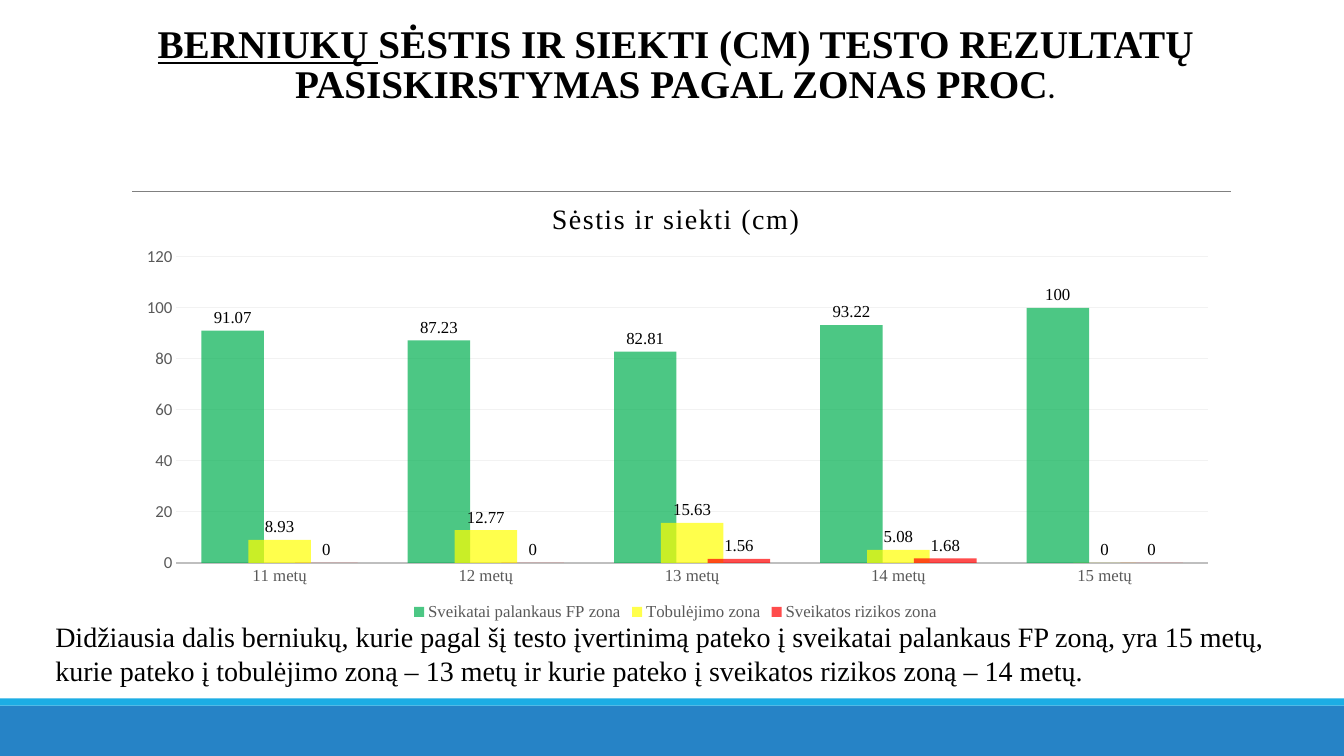
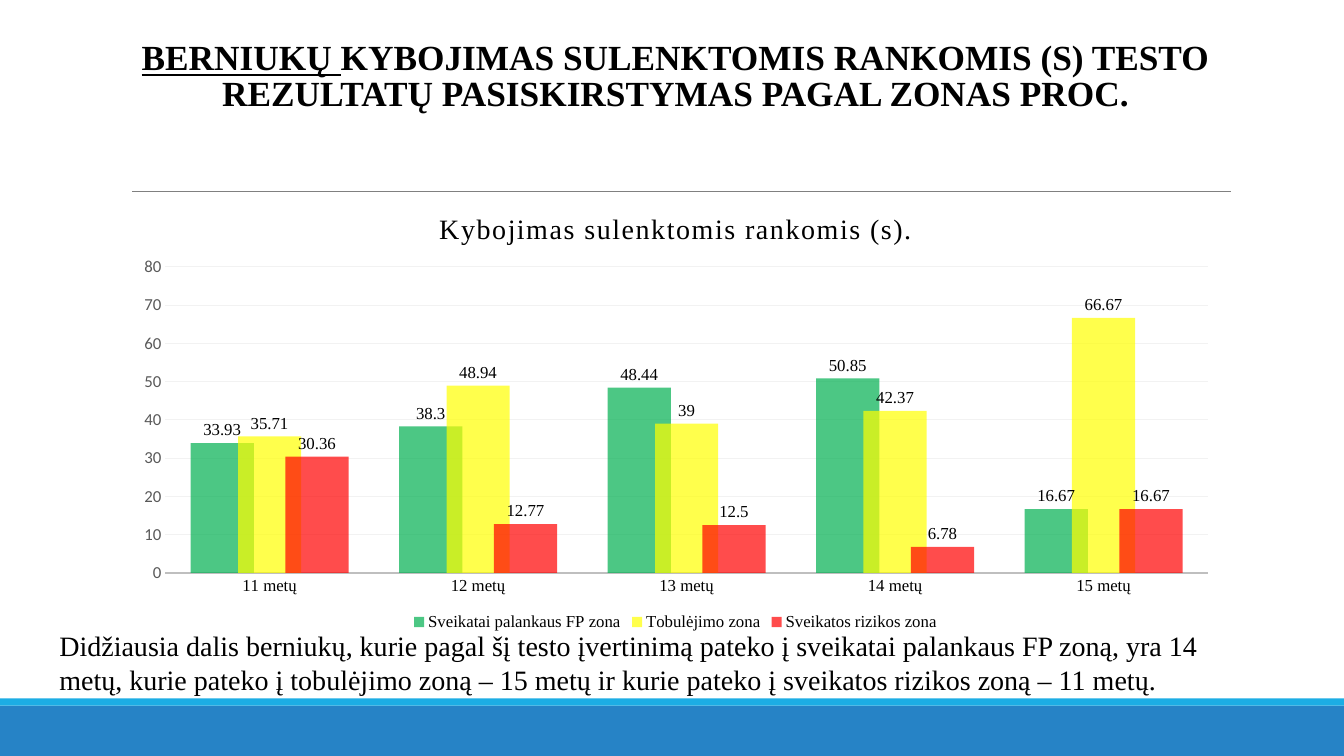
from lxml import etree
from pptx import Presentation
from pptx import util as u
from pptx.chart import data as chart_data
from pptx.dml import color
from pptx.enum import chart as ch
from pptx.enum import shapes, text
from pptx.oxml import ns, parse_xml

SERIF, SANS = "Times New Roman", "Calibri"
COLORS = {
    "band": "2683C6", "stripe": "1CADE4", "rule": "808080",
    "black": "000000", "gray": "595959", "axis": "BFBFBF", "grid": "F2F2F2",
    "healthy": "00B050", "improving": "FFFF00", "risk": "FF0000",
}
ZONES = [("Sveikatai palankaus FP zona", "healthy"),
         ("Tobulėjimo zona", "improving"),
         ("Sveikatos rizikos zona", "risk")]
AGES = [f"{age} metų" for age in range(11, 16)]


def rgb(name):
    return color.RGBColor.from_string(COLORS[name])


def set_font(font, size, name=SERIF, tint="black", bold=False):
    font.size, font.name, font.bold = u.Pt(size), name, bold
    font.color.rgb = rgb(tint)


def add_span(para, words, size, name=SERIF, bold=False, underline=False):
    span = para.add_run()
    span.text = words
    set_font(span.font, size, name, bold=bold)
    span.font.underline = underline
    return span


# Shared parts: title place, bottom bands and rule
def add_band(page, top, height, tint):
    band = page.shapes.add_shape(shapes.MSO_SHAPE.RECTANGLE, 0, u.Inches(top),
                                 u.Inches(13.33), u.Inches(height))
    band.shadow.inherit = False
    band.fill.solid()
    band.fill.fore_color.rgb = rgb(tint)
    band.line.fill.background()
    return band


def add_rule(page):
    rule = page.shapes.add_connector(
        shapes.MSO_CONNECTOR.STRAIGHT, u.Inches(1.31), u.Inches(1.9),
        u.Inches(12.21), u.Inches(1.9))
    rule.line.color.rgb = rgb("rule")
    rule.line.width = u.Pt(0.5)
    etree.SubElement(rule._element.spPr, ns.qn("a:effectLst"))
    return rule


def style_layout(layout, page):
    """Draw the shared parts on a page, then move them to its layout."""
    title = layout.placeholders[0]
    title.left, title.top = u.Inches(1.2), u.Inches(0.31)
    title.width, title.height = u.Inches(11), u.Inches(1.59)
    parts = [add_band(page, 7, 0.5, "band"),
             add_band(page, 6.93, 0.07, "stripe"), add_rule(page)]
    for number, part in enumerate(parts):
        part._element.xpath(".//p:cNvPr")[0].set("id", str(100 + number))
        layout.shapes._spTree.insert(2 + number, part._element)


# Text
def fill_title(page, spans, bottom_inset):
    frame = page.shapes.title.text_frame
    frame.auto_size = text.MSO_AUTO_SIZE.NONE
    frame.vertical_anchor = text.MSO_ANCHOR.BOTTOM
    frame.margin_top, frame.margin_bottom = 0, u.Inches(bottom_inset)
    para = frame.paragraphs[0]
    para.alignment = text.PP_ALIGN.CENTER
    para.line_spacing = 0.85
    for span in spans:
        add_span(para, **span)


def add_summary(page, left, top, width, words):
    box = page.shapes.add_textbox(u.Inches(left), u.Inches(top),
                                  u.Inches(width), u.Inches(0.77))
    box.text_frame.word_wrap = True
    box.text_frame.auto_size = text.MSO_AUTO_SIZE.SHAPE_TO_FIT_TEXT
    add_span(box.text_frame.paragraphs[0], words, 20)


# Chart
def style_series(series, tint):
    series.format.fill.solid()
    series.format.fill.fore_color.rgb = rgb(tint)
    fill = series._element.xpath("./c:spPr/a:solidFill/a:srgbClr")[0]
    etree.SubElement(fill, ns.qn("a:alpha")).set("val", "70000")
    series.invert_if_negative = False
    labels = series.data_labels
    labels.show_value = True
    labels.position = ch.XL_LABEL_POSITION.OUTSIDE_END
    set_font(labels.font, 12)


def style_axes(chart, top_value, step, label_tint):
    ages, values = chart.category_axis, chart.value_axis
    for axis in (ages, values):
        axis.major_tick_mark = axis.minor_tick_mark = ch.XL_TICK_MARK.NONE
    set_font(ages.tick_labels.font, 12, tint=label_tint)
    ages.format.line.color.rgb = rgb("axis")
    ages.format.line.width = u.Pt(1.25)
    set_font(values.tick_labels.font, 12, SANS, "gray")
    values.format.line.fill.background()
    values.minimum_scale, values.maximum_scale = 0, top_value
    values.major_unit = step
    grid = values.major_gridlines.format.line
    grid.color.rgb = rgb("grid")
    grid.width = u.Pt(0.75)


def place_plot(chart, left):
    area = chart._chartSpace.chart.plotArea
    for old in area.findall(ns.qn("c:layout")):
        area.remove(old)
    sizes = {"x": left, "y": 0.17, "w": round(0.98 - left, 2), "h": 0.69}
    places = "".join(f'<c:{key} val="{size}"/>' for key, size in sizes.items())
    area.insert(0, parse_xml(
        f'<c:layout {ns.nsdecls("c")}><c:manualLayout>'
        '<c:layoutTarget val="inner"/><c:xMode val="edge"/>'
        f'<c:yMode val="edge"/>{places}</c:manualLayout></c:layout>'))


def add_zone_chart(page, top, heading, rows, top_value, step, label_tint,
                   plot_left):
    data = chart_data.CategoryChartData()
    data.categories = AGES
    for (zone, _), row in zip(ZONES, rows):
        data.add_series(zone, row)
    chart = page.shapes.add_chart(
        ch.XL_CHART_TYPE.COLUMN_CLUSTERED, u.Inches(1.2), u.Inches(top),
        u.Inches(11), u.Inches(4.4), data).chart
    set_font(chart.font, 10, SANS)

    para = chart.chart_title.text_frame.paragraphs[0]
    span = add_span(para, heading, 20)
    span._r.get_or_add_rPr().set("spc", "100")
    chart.chart_title.include_in_layout = False

    chart.has_legend = True
    chart.legend.position = ch.XL_LEGEND_POSITION.BOTTOM
    chart.legend.include_in_layout = False
    set_font(chart.legend.font, 12, tint=label_tint)

    plot = chart.plots[0]
    plot.gap_width, plot.overlap = 80, 25
    plot.vary_by_categories = False
    for series, (_, tint) in zip(plot.series, ZONES):
        style_series(series, tint)
    style_axes(chart, top_value, step, label_tint)
    place_plot(chart, plot_left)


def main():
    deck = Presentation()
    deck.slide_width, deck.slide_height = u.Inches(13.33), u.Inches(7.5)
    layout = deck.slide_layouts[5]
    reach, hang = [deck.slides.add_slide(layout) for _ in range(2)]
    style_layout(layout, reach)

    # Sit and reach
    fill_title(reach, [
        dict(words="BERNIUKŲ ", size=28, bold=True, underline=True),
        dict(words="SĖSTIS IR SIEKTI (CM) TESTO REZULTATŲ "
                   "PASISKIRSTYMAS PAGAL ZONAS PROC", size=28, bold=True),
        dict(words=".", size=24, name=SANS)], 0.84)
    add_zone_chart(
        reach, 1.8, "Sėstis ir siekti (cm)",
        [(91.07, 87.23, 82.81, 93.22, 100), (8.93, 12.77, 15.63, 5.08, 0),
         (0, 0, 1.56, 1.68, 0)], 120, 20, "gray", 0.05)
    add_summary(
        reach, 0.45, 6.1, 12.5,
        "Didžiausia dalis berniukų, kurie pagal šį testo įvertinimą pateko į "
        "sveikatai palankaus FP zoną, yra 15 metų, kurie pateko į tobulėjimo "
        "zoną – 13 metų ir kurie pateko į sveikatos rizikos zoną – 14 metų.")

    # Bent-arm hang
    fill_title(hang, [
        dict(words="BERNIUKŲ ", size=25.2, bold=True, underline=True),
        dict(words="KYBOJIMAS SULENKTOMIS RANKOMIS (S) TESTO REZULTATŲ "
                   "PASISKIRSTYMAS PAGAL ZONAS PROC.", size=25.2, bold=True)],
        0.77)
    add_zone_chart(
        hang, 1.9, "Kybojimas sulenktomis rankomis (s).",
        [(33.93, 38.3, 48.44, 50.85, 16.67), (35.71, 48.94, 39, 42.37, 66.67),
         (30.36, 12.77, 12.5, 6.78, 16.67)], 80, 10, "black", 0.04)
    add_summary(
        hang, 0.49, 6.19, 12.13,
        "Didžiausia dalis berniukų, kurie pagal šį testo įvertinimą pateko į "
        "sveikatai palankaus FP zoną, yra 14 metų, kurie pateko į tobulėjimo "
        "zoną – 15 metų ir kurie pateko į sveikatos rizikos zoną – 11 metų.")

    deck.save("out.pptx")


if __name__ == "__main__":
    main()
